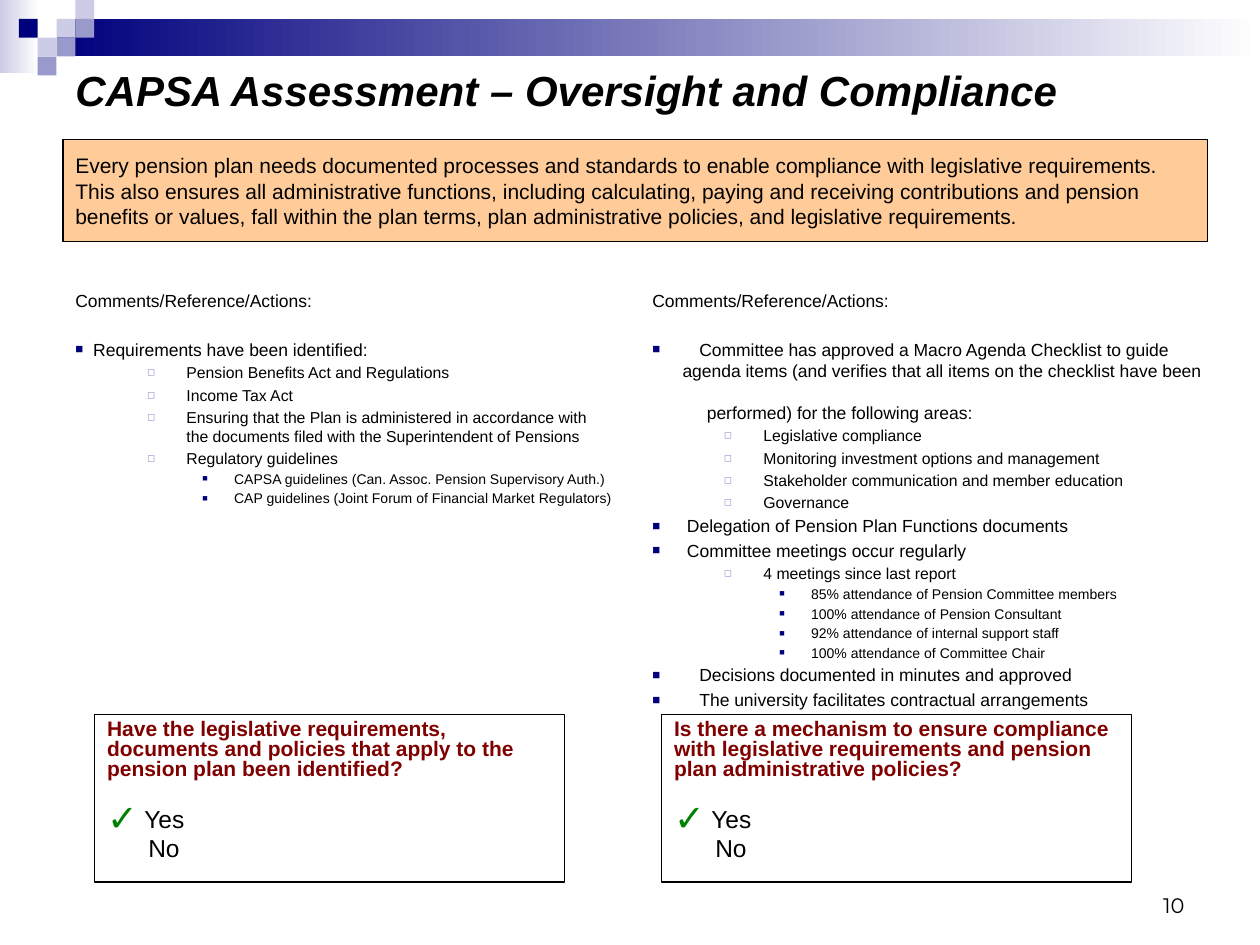
from lxml import etree
from pptx import Presentation
from pptx.dml.color import RGBColor
from pptx.enum.shapes import MSO_SHAPE
from pptx.enum.text import MSO_ANCHOR, PP_ALIGN
from pptx.oxml.ns import qn
from pptx.util import Cm, Pt

RECTANGLE = MSO_SHAPE.RECTANGLE
TOP, MIDDLE, BOTTOM = MSO_ANCHOR.TOP, MSO_ANCHOR.MIDDLE, MSO_ANCHOR.BOTTOM
LEFT, RIGHT = PP_ALIGN.LEFT, PP_ALIGN.RIGHT

BLACK = RGBColor(0x00, 0x00, 0x00)
WHITE = RGBColor(0xFF, 0xFF, 0xFF)
NAVY = RGBColor(0x00, 0x00, 0x7D)
LILAC = RGBColor(0x99, 0x99, 0xCC)
PALE = RGBColor(0xCC, 0xCC, 0xE6)
PEACH = RGBColor(0xFF, 0xCC, 0x99)
MAROON = RGBColor(0x80, 0x00, 0x00)
GREEN = RGBColor(0x00, 0x80, 0x00)

SQUARE = 0.38
# Each list level: font size, left margin (cm), hanging indent (cm), bullet
LEVELS = [
    (10, 0.7, 0.7, ("■", NAVY, 75)),
    (9, 2.24, 0.79, ("◻", LILAC, 80)),
    (8, 3.2, 0.64, ("■", NAVY, 65)),
]
HEADING = "Comments/Reference/Actions:"

IDENTIFIED = [
    (0, "Requirements have been identified:", 0.36),
    (1, "Pension Benefits Act and Regulations"),
    (1, "Income Tax Act"),
    (1, "Ensuring that the Plan is administered in accordance with\v"
        "the documents filed with the Superintendent of Pensions"),
    (1, "Regulatory guidelines"),
    (2, "CAPSA guidelines (Can. Assoc. Pension Supervisory Auth.)"),
    (2, "CAP guidelines (Joint Forum of Financial Market Regulators)"),
]
# A level of None continues the item above without a bullet
MECHANISM = [
    (0, "Committee has approved a Macro Agenda Checklist to guide", 0.95),
    (None, "agenda items (and verifies that all items on the checklist have been", 0.61, 0),
    (None, "performed) for the following areas:", 1.1, 12),
    (1, "Legislative compliance"),
    (1, "Monitoring investment options and management"),
    (1, "Stakeholder communication and member education"),
    (1, "Governance"),
    (0, "Delegation of Pension Plan Functions documents"),
    (0, "Committee meetings occur regularly"),
    (1, "4 meetings since last report"),
    (2, "85% attendance of Pension Committee members"),
    (2, "100% attendance of Pension Consultant"),
    (2, "92% attendance of internal support staff"),
    (2, "100% attendance of Committee Chair"),
    (0, "Decisions documented in minutes and approved", 0.95),
    (0, "The university facilitates contractual arrangements", 0.95),
]


class Page:
    def __init__(self, slide, font="Arial"):
        self.slide = slide
        self.font = font

    def rectangle(self, left, top, width, height, fill=None, fade=False, line=None):
        """Draw a rectangle; fade runs the fill to white from left to right."""
        box = self.slide.shapes.add_shape(
            RECTANGLE, Cm(left), Cm(top), Cm(width), Cm(height))
        box.shadow.inherit = False
        if fade:
            box.fill.gradient()
            box.fill.gradient_angle = 0
            for stop, color in zip(box.fill.gradient_stops, (fill, WHITE)):
                stop.color.rgb = color
        elif fill is None:
            box.fill.background()
        else:
            box.fill.solid()
            box.fill.fore_color.rgb = fill
        if line is None:
            box.line.fill.background()
        else:
            box.line.color.rgb = line
            box.line.width = Pt(0.75)
        return box

    def text_box(self, left, top, width, height):
        return self.slide.shapes.add_textbox(
            Cm(left), Cm(top), Cm(width), Cm(height))

    def frame(self, box, anchor=TOP):
        frame = box.text_frame
        frame.word_wrap = True
        frame.vertical_anchor = anchor
        return frame

    def paragraph(self, frame, text, size, color=BLACK, bold=False, italic=False,
                  align=LEFT, before=0, spacing=None, margin=0, hang=0,
                  bullet=None, font=None):
        para = frame.paragraphs[0]
        if para.runs:
            para = frame.add_paragraph()
        para.text = text
        para.alignment = align
        para.space_before = Pt(before)
        if spacing:
            para.line_spacing = spacing
        properties = para._p.get_or_add_pPr()
        properties.set("marL", str(Cm(margin)))
        properties.set("indent", str(-Cm(hang)))
        if bullet:
            self.bullet(properties, *bullet)
        para.font.name = font or self.font
        para.font.size = Pt(size)
        para.font.bold = bold
        para.font.italic = italic
        para.font.color.rgb = color

    def bullet(self, properties, char, color, percent):
        tint = etree.SubElement(properties, qn("a:buClr"))
        etree.SubElement(tint, qn("a:srgbClr"), val=str(color))
        etree.SubElement(properties, qn("a:buSzPct"), val=str(percent * 1000))
        etree.SubElement(properties, qn("a:buFont"), typeface=self.font)
        etree.SubElement(properties, qn("a:buChar"), char=char)

    def outline(self, box, items):
        """Write the heading and an indented list of (level, text, margin, before)."""
        frame = self.frame(box)
        self.paragraph(frame, HEADING, 10)
        for index, (level, text, *custom) in enumerate(items):
            size, margin, hang, bullet = LEVELS[level or 0]
            if custom:
                margin = hang = custom[0]
            if level is None:
                hang, bullet = 0, None
            before = custom[1] if len(custom) > 1 else 0.2 * size
            self.paragraph(frame, text, size, before=16 if index == 0 else before,
                           margin=margin, hang=hang, bullet=bullet)

    def question(self, left, text):
        """Draw a framed question answered with a ticked Yes."""
        frame = self.frame(self.rectangle(left, 14.4, 9.47, 3.38, line=BLACK))
        self.paragraph(frame, text, 12, MAROON, bold=True, spacing=0.8)
        self.paragraph(frame, "Yes", 14, before=16.5, spacing=0.8,
                       margin=0.75, hang=0.75, bullet=("✓", GREEN, 150))
        self.paragraph(frame, "No", 14, before=3, spacing=0.8, margin=0.83)


def main():
    deck = Presentation()
    deck.slide_width, deck.slide_height = Cm(25.4), Cm(19.05)
    page = Page(deck.slides.add_slide(deck.slide_layouts[6]))

    page.rectangle(0, 0, 0.79, 1.47, PALE, fade=True)
    page.rectangle(3 * SQUARE, SQUARE, 24.26, 0.76, NAVY, fade=True)
    for column, row, color in [(3, 1, PALE), (4, 0, PALE), (4, 1, LILAC), (2, 2, PALE),
                               (1, 1, NAVY), (3, 2, LILAC), (2, 3, LILAC)]:
        page.rectangle(column * SQUARE, row * SQUARE, SQUARE, SQUARE, color)

    number = page.frame(page.text_box(18.21, 17.35, 5.92, 1.27), BOTTOM)
    page.paragraph(number, "10", 12, align=RIGHT, font="Montserrat")
    title = page.frame(page.text_box(1.27, 1.27, 22.86, 1.07), MIDDLE)
    page.paragraph(title, "CAPSA Assessment – Oversight and Compliance", 24,
                   bold=True, italic=True)

    summary = page.frame(
        page.rectangle(1.27, 2.82, 23.07, 2.05, PEACH, line=BLACK), MIDDLE)
    for text in [
        "Every pension plan needs documented processes and standards to enable "
        "compliance with legislative requirements. This also ensures all administrative "
        "functions, including calculating, paying and receiving contributions and pension",
        "benefits or values, fall within the plan terms, plan administrative policies, "
        "and legislative requirements.",
    ]:
        page.paragraph(summary, text, 12)

    page.outline(page.text_box(1.27, 5.72, 11.43, 6.55), IDENTIFIED)
    page.outline(page.text_box(12.9, 5.72, 11.86, 8.26), MECHANISM)
    page.question(1.91, "Have the legislative requirements, documents and policies "
                        "that apply to the pension plan been identified?")
    page.question(13.34, "Is there a mechanism to ensure compliance with legislative "
                         "requirements and pension plan administrative policies?")
    deck.save("out.pptx")


if __name__ == "__main__":
    main()
